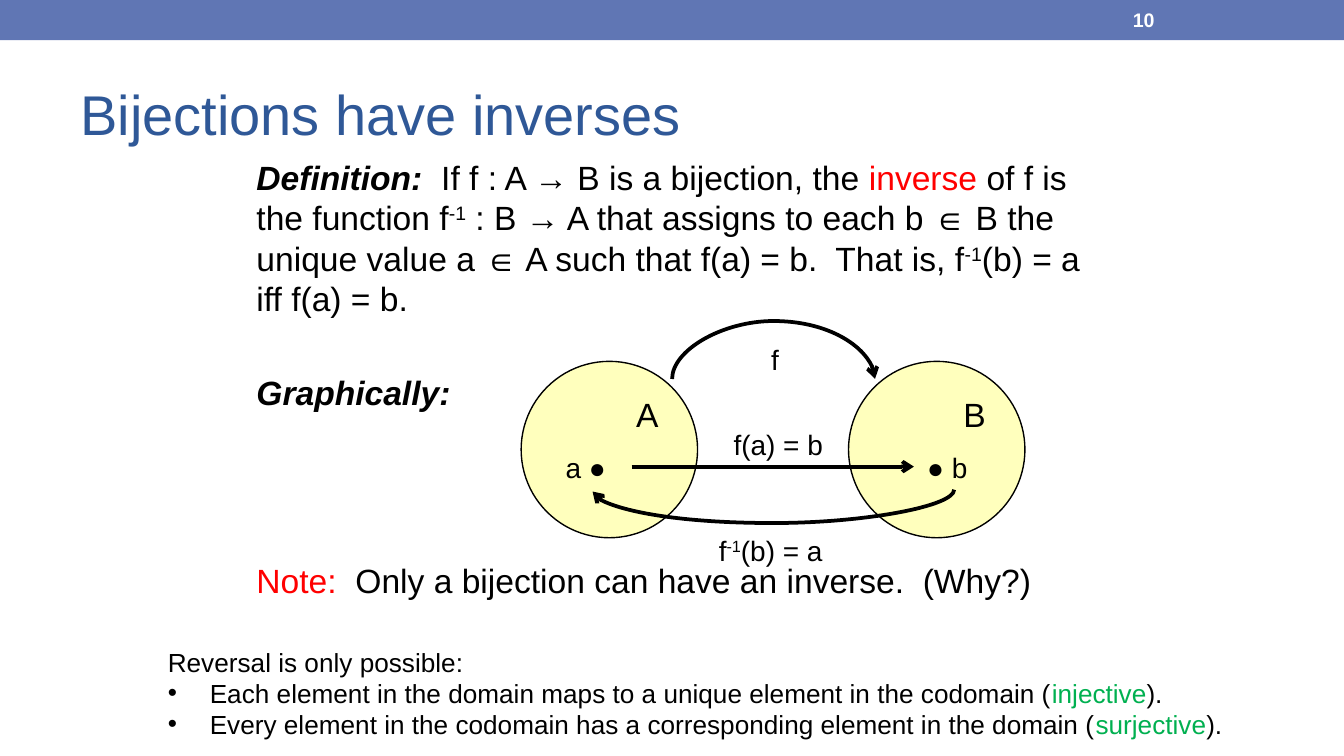
from lxml.etree import SubElement
from pptx import Presentation
from pptx.dml.color import RGBColor
from pptx.enum.shapes import MSO_CONNECTOR, MSO_SHAPE
from pptx.enum.text import MSO_ANCHOR, PP_ALIGN
from pptx.oxml.ns import qn
from pptx.util import Pt

BLACK, RED, GREEN = "000000", "FF0000", "00B050"


def rgb(value):
    return RGBColor.from_string(value)


def add_runs(p, size, runs, color=BLACK, bold=False, italic=False):
    """Each run is plain text or (text, color); "^" in front makes a superscript."""
    for run in runs:
        text, run_color = run if isinstance(run, tuple) else (run, color)
        r = p.add_run()
        r.text = text.lstrip("^")
        r.font.name = "Arial"
        r.font.size = Pt(size)
        r.font.bold = bold
        r.font.italic = italic
        r.font.color.rgb = rgb(run_color)
        if text.startswith("^"):
            r.font._element.set("baseline", "30000")


prs = Presentation()
prs.slide_width, prs.slide_height = Pt(720), Pt(405)
s = prs.slides.add_slide(prs.slide_layouts[6])

# Top band
sp = s.shapes.add_shape(MSO_SHAPE.RECTANGLE, 0, 0, Pt(720), Pt(21.6))
sp.shadow.inherit = False
sp.fill.solid()
sp.fill.fore_color.rgb = rgb("6076B4")
sp.line.fill.background()

# Title and page number
for x, y, w, h, size, text, color, bold in [
    (36, 31.7, 648, 58.3, 30, "Bijections have inverses", "2F5897", False),
    (599.8, 0.7, 84.2, 19.4, 10.5, "10", "FFFFFF", True),
]:
    tf = s.shapes.add_textbox(Pt(x), Pt(y), Pt(w), Pt(h)).text_frame
    tf.word_wrap = True
    tf.vertical_anchor = MSO_ANCHOR.MIDDLE
    add_runs(tf.paragraphs[0], size, [text], color, bold)

# Definition, heading of the diagram, and note
tf = s.shapes.add_textbox(Pt(130.3), Pt(80.6), Pt(457.2), Pt(279.4)).text_frame
tf.word_wrap = True
body = [
    (1.5, "Definition:", [
        "  If f : A → B is a bijection, the ", ("inverse ", RED),
        "of f is the function f", "^-1",
        " : B → A that assigns to each b ∈ B the unique value a ∈ A "
        "such that f(a) = b.  That is, f", "^-1", "(b) = a iff f(a) = b."]),
    (28.8, "Graphically:", []),
    (79.2, "", [("Note:  ", RED), "Only a bijection can have an inverse.  (Why?)"]),
]
for i, (gap, heading, runs) in enumerate(body):
    p = tf.add_paragraph() if i else tf.paragraphs[0]
    p.space_before = Pt(gap)
    p.line_spacing = Pt(21.6)
    if heading:
        add_runs(p, 18, [heading], bold=True, italic=True)
    add_runs(p, 18, runs)

# Sets A and B
for x, name in [(279.2, "A"), (454.6, "B")]:
    sp = s.shapes.add_shape(MSO_SHAPE.OVAL, Pt(x), Pt(193.6), Pt(94.5), Pt(94.5))
    sp.shadow.inherit = False
    sp.fill.solid()
    sp.fill.fore_color.rgb = rgb("FFFFBD")
    sp.line.color.rgb = rgb(BLACK)
    sp.line.width = Pt(0.75)
    tf = sp.text_frame
    tf.vertical_anchor = MSO_ANCHOR.TOP
    tf.paragraphs[0].alignment = PP_ALIGN.RIGHT
    add_runs(tf.paragraphs[0], 18, [name])

# Arrows: the curves are laid out upright, then turned by 90 degrees;
# bend is the depth of the curve as a multiple of its upright width
for kind, x1, y1, x2, y2, bend in [
    (MSO_CONNECTOR.CURVE, 414.45, 257.4, 414.35, 148.7, 274),   # f
    (MSO_CONNECTOR.STRAIGHT, 338.4, 250, 489.6, 250, None),     # f(a) = b
    (MSO_CONNECTOR.CURVE, 413.8, 166, 414.8, 359.7, 18),        # inverse
]:
    c = s.shapes.add_connector(kind, Pt(x1), Pt(y1), Pt(x2), Pt(y2))
    c.line.color.rgb = rgb(BLACK)
    c.line.width = Pt(2)
    props = c._element.spPr
    SubElement(props.find(qn("a:ln")), qn("a:tailEnd"), type="arrow")
    SubElement(props, qn("a:effectLst"))
    if bend:
        c.rotation = 90
        geom = props.find(qn("a:prstGeom"))
        guides = geom.find(qn("a:avLst"))
        if guides is None:
            guides = SubElement(geom, qn("a:avLst"))
        SubElement(guides, qn("a:gd"), name="adj1", fmla=f"val {bend * 100000}")

# Diagram labels
for x, y, w, runs in [
    (406.1, 180, 18.7, ["f"]),
    (295.9, 237.6, 42.5, ["a ●"]),
    (489.6, 237.6, 42.5, ["● b"]),
    (385.9, 225.4, 62.6, ["f(a) = b"]),
    (378, 282.2, 72, ["f", "^-1", "(b) = a"]),
]:
    tf = s.shapes.add_textbox(Pt(x), Pt(y), Pt(w), Pt(25.2)).text_frame
    tf.word_wrap = False
    add_runs(tf.paragraphs[0], 15, runs)

# Conditions for reversal
tf = s.shapes.add_textbox(Pt(82.8), Pt(342.7), Pt(581.8), Pt(58.3)).text_frame
tf.word_wrap = False
conditions = [
    ["Reversal is only possible:"],
    ["Each element in the domain maps to a unique element in the codomain (",
     ("injective", GREEN), ")."],
    ["Every element in the codomain has a corresponding element in the domain (",
     ("surjective", GREEN), ")."],
]
for i, runs in enumerate(conditions):
    p = tf.add_paragraph() if i else tf.paragraphs[0]
    p.alignment = PP_ALIGN.JUSTIFY
    p.line_spacing = Pt(16.6)
    if i:
        pPr = p._p.get_or_add_pPr()
        pPr.set("marL", str(Pt(22.5)))
        pPr.set("indent", str(-Pt(22.5)))
        SubElement(pPr, qn("a:buFont"), typeface="Arial")
        SubElement(pPr, qn("a:buChar"), char="•")
    add_runs(p, 14, runs)

prs.save("out.pptx")
